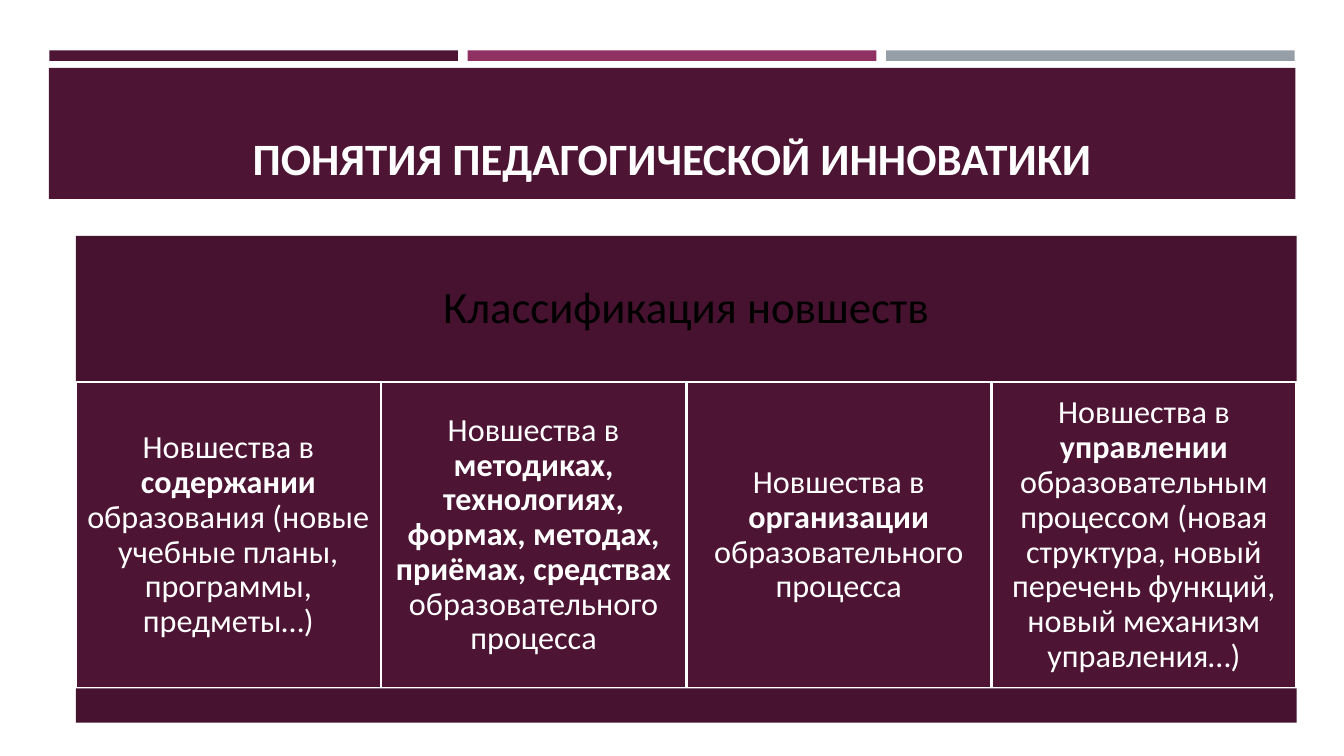
from typing import NamedTuple

from pptx import Presentation
from pptx import util as u
from pptx.dml.color import RGBColor
from pptx.enum import shapes, text
from pptx.shapes.autoshape import Shape
from pptx.slide import Slide

PLUM = RGBColor(0x4D, 0x14, 0x34)
DARK_PLUM = RGBColor(0x46, 0x12, 0x2F)
MAGENTA = RGBColor(0x90, 0x31, 0x63)
GREY = RGBColor(0x96, 0x9F, 0xA7)
WHITE = RGBColor(0xFF, 0xFF, 0xFF)
BLACK = RGBColor(0x00, 0x00, 0x00)

SLIDE_WIDTH = u.Inches(13.33)
SLIDE_HEIGHT = u.Inches(7.5)
FONT = "Calibri"


class Area(NamedTuple):
    """A rectangle in percent of the slide's width and height."""
    left: float
    top: float
    width: float
    height: float

    def lengths(self) -> tuple[int, int, int, int]:
        """Return left, top, width and height as slide lengths."""
        return (
            round(SLIDE_WIDTH * self.left / 100),
            round(SLIDE_HEIGHT * self.top / 100),
            round(SLIDE_WIDTH * self.width / 100),
            round(SLIDE_HEIGHT * self.height / 100),
        )


class Innovation(NamedTuple):
    """One class of innovations: its lead, emphasised words and the rest."""
    lead: str
    emphasis: str
    rest: str


TITLE = "ПОНЯТИЯ ПЕДАГОГИЧЕСКОЙ ИННОВАТИКИ"
CLASSIFICATION = "Классификация новшеств"
INNOVATIONS = [
    Innovation("Новшества в ", "содержании ",
               "образования (новые учебные планы, программы, предметы…)"),
    Innovation("Новшества в ",
               "методиках, технологиях, формах, методах, приёмах, средствах",
               " образовательного процесса"),
    Innovation("Новшества в ", "организации", " образовательного процесса"),
    Innovation("Новшества в ", "управлении ",
               "образовательным процессом (новая структура, новый перечень "
               "функций, новый механизм управления…)"),
]

STRIPE = Area(3.67, 6.67, 30.4, 1.4)
STRIPE_STEP = 31.13
BANNER = Area(3.63, 8.97, 92.75, 17.33)
TITLE_AREA = Area(4.8, 10.27, 90.45, 14.8)
HEADING = Area(5.65, 31.2, 90.83, 19.33)
CLASSES = Area(5.65, 50.53, 90.83, 40.53)
FOOTING = Area(5.65, 91.07, 90.83, 4.53)


def add_block(slide: Slide, area: Area, fill: RGBColor) -> Shape:
    """Draw a plain filled rectangle without outline or shadow."""
    block = slide.shapes.add_shape(shapes.MSO_SHAPE.RECTANGLE, *area.lengths())
    block.shadow.inherit = False
    block.fill.solid()
    block.fill.fore_color.rgb = fill
    block.line.fill.background()
    return block


def write(block: Shape, parts: list[str], size: float, color: RGBColor,
          inset: float) -> None:
    """Write a centred paragraph whose every second part is bold."""
    frame = block.text_frame
    frame.word_wrap = True
    frame.vertical_anchor = text.MSO_ANCHOR.MIDDLE
    frame.margin_left = frame.margin_right = u.Inches(inset)
    frame.margin_top = frame.margin_bottom = u.Inches(inset)
    paragraph = frame.paragraphs[0]
    paragraph.alignment = text.PP_ALIGN.CENTER
    paragraph.line_spacing = 0.9
    paragraph.font.name = FONT
    paragraph.font.size = u.Pt(size)
    paragraph.font.color.rgb = color
    for index, part in enumerate(parts):
        run = paragraph.add_run()
        run.text = part
        run.font.name = FONT
        run.font.size = u.Pt(size)
        run.font.color.rgb = color
        run.font.bold = index % 2 == 1


def add_title(slide: Slide) -> None:
    """Draw the banner and set the title in front of it."""
    add_block(slide, BANNER, PLUM)
    title = slide.shapes.title
    slide.shapes._spTree.append(title._element)
    title.left, title.top, title.width, title.height = TITLE_AREA.lengths()
    title.text = TITLE
    title.text_frame.auto_size = text.MSO_AUTO_SIZE.NONE
    title.text_frame.vertical_anchor = text.MSO_ANCHOR.BOTTOM
    paragraph = title.text_frame.paragraphs[0]
    paragraph.alignment = text.PP_ALIGN.CENTER
    for font in (paragraph.font, paragraph.runs[0].font):
        font.name = FONT
        font.size = u.Pt(32)
        font.bold = True
        font.color.rgb = WHITE


def add_classification(slide: Slide) -> None:
    """Draw the heading, the row of classes and the footing."""
    write(add_block(slide, HEADING, DARK_PLUM), [CLASSIFICATION], 32, BLACK, 0.13)
    width = CLASSES.width / len(INNOVATIONS)
    for column, innovation in enumerate(INNOVATIONS):
        area = CLASSES._replace(left=CLASSES.left + column * width, width=width)
        block = add_block(slide, area, PLUM)
        block.line.color.rgb = WHITE
        block.line.width = u.Pt(1.75)
        write(block, list(innovation), 23, WHITE, 0.1)
    add_block(slide, FOOTING, DARK_PLUM)


def main() -> None:
    """Build the slide and save it."""
    deck = Presentation()
    deck.slide_width, deck.slide_height = SLIDE_WIDTH, SLIDE_HEIGHT
    slide = deck.slides.add_slide(deck.slide_layouts[5])
    for column, color in enumerate((PLUM, MAGENTA, GREY)):
        add_block(slide, STRIPE._replace(left=STRIPE.left + column * STRIPE_STEP), color)
    add_title(slide)
    add_classification(slide)
    deck.save("out.pptx")


if __name__ == "__main__":
    main()
